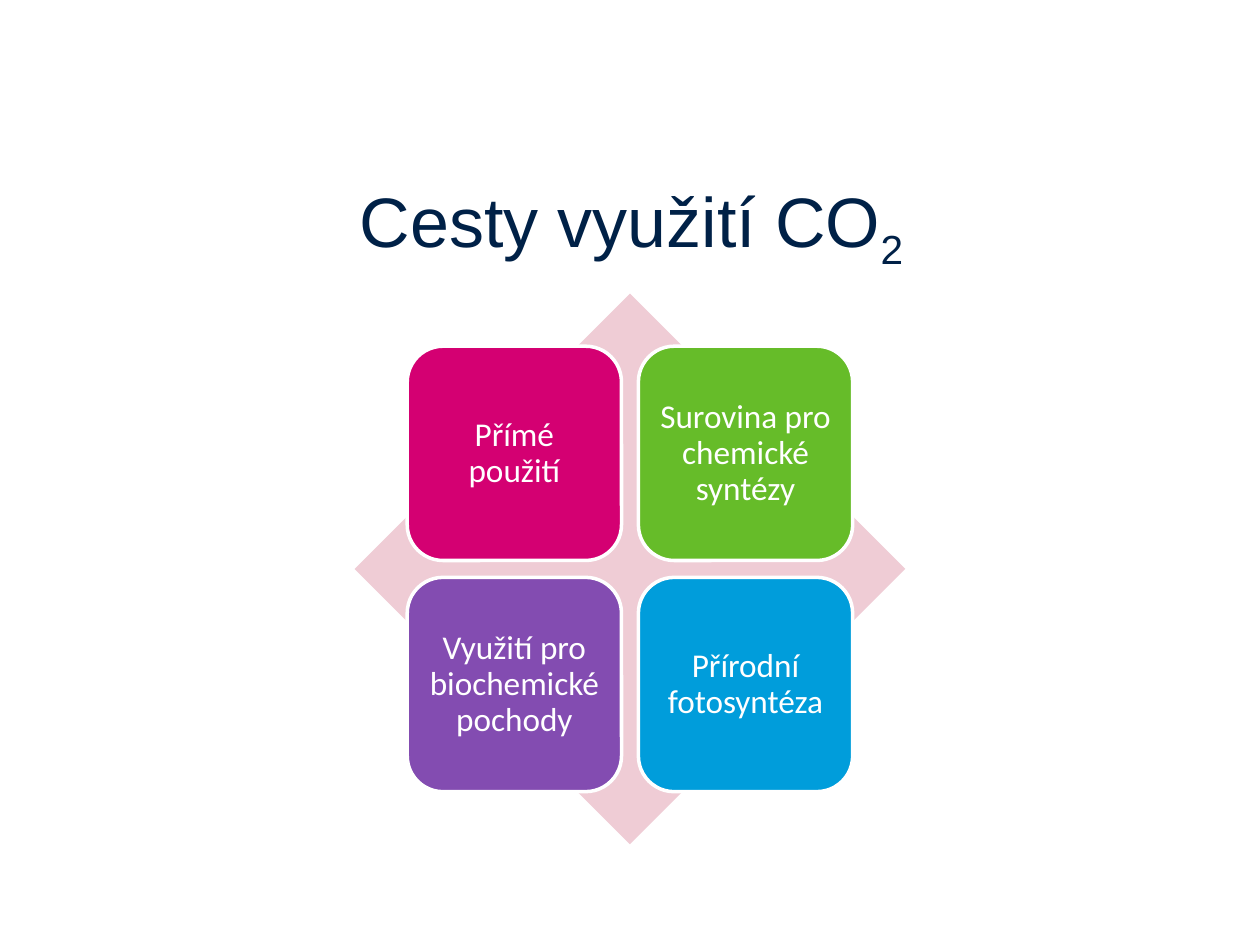
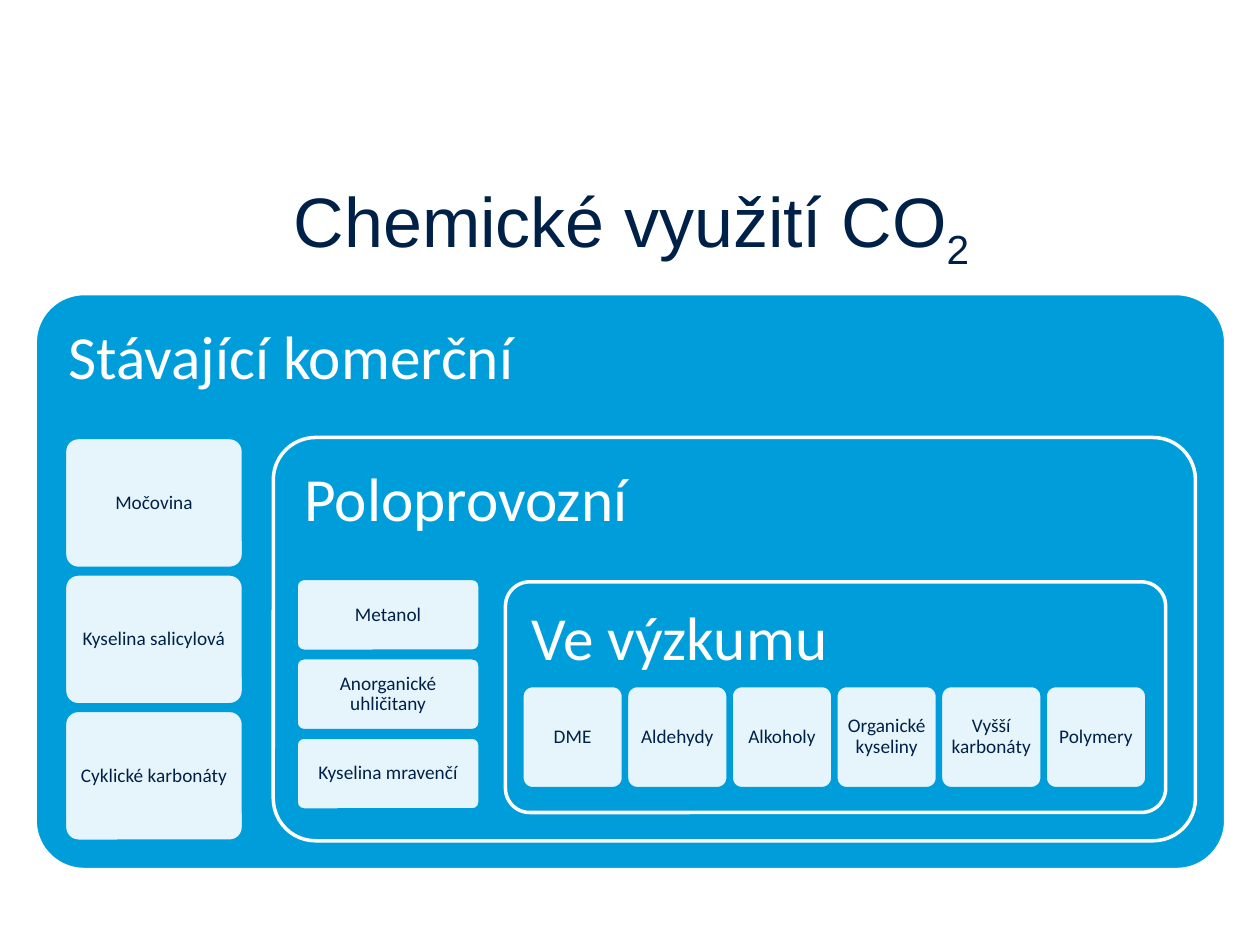
from lxml import etree
from pptx import Presentation
from pptx import util as u
from pptx.dml.color import RGBColor
from pptx.enum import shapes, text
from pptx.oxml.ns import qn

NAVY = RGBColor(0x00, 0x21, 0x47)
WHITE = RGBColor(0xFF, 0xFF, 0xFF)
PINK = RGBColor(0xEF, 0xCC, 0xD5)
MAGENTA = RGBColor(0xD4, 0x00, 0x72)
GREEN = RGBColor(0x66, 0xBC, 0x29)
PURPLE = RGBColor(0x83, 0x4C, 0xB1)
BLUE = RGBColor(0x00, 0x9D, 0xDB)


def add_titled_slide(title):
    """Add a blank slide with a centred title that ends in a subscript 2."""
    s = prs.slides.add_slide(prs.slide_layouts[6])
    tf = s.shapes.add_textbox(u.Cm(1.3), u.Cm(3.53), u.Cm(22.86), u.Cm(2.01)).text_frame
    tf.word_wrap = True
    tf.vertical_anchor = text.MSO_ANCHOR.MIDDLE
    p = tf.paragraphs[0]
    p.alignment = text.PP_ALIGN.CENTER
    for part in (title, "2"):
        r = p.add_run()
        r.text = part
        r.font.name, r.font.size = "Arial", u.Pt(40)
        r.font.color.rgb = NAVY
    r._r.get_or_add_rPr().set("baseline", "-25000")
    return s


def add_box(s, label, box, fill, line, color, size, inset, adj=0.105, heading=False):
    """Add a labelled rounded box; a heading sits at its top left."""
    sp = s.shapes.add_shape(shapes.MSO_SHAPE.ROUNDED_RECTANGLE, *map(u.Cm, box))
    sp.shadow.inherit = False
    sp.adjustments[0] = adj
    sp.fill.solid()
    sp.fill.fore_color.rgb = fill
    sp.line.color.rgb = line
    sp.line.width = u.Pt(2)
    tf = sp.text_frame
    tf.word_wrap = True
    tf.margin_left = tf.margin_right = tf.margin_top = tf.margin_bottom = u.Cm(inset)
    tf.vertical_anchor = text.MSO_ANCHOR.TOP if heading else text.MSO_ANCHOR.MIDDLE
    p = tf.paragraphs[0]
    p.alignment = text.PP_ALIGN.LEFT if heading else text.PP_ALIGN.CENTER
    p.line_spacing = 0.9
    r = p.add_run()
    r.text = label
    r.font.name, r.font.size = "Calibri", u.Pt(size)
    r.font.color.rgb = color
    return sp


prs = Presentation()
prs.slide_width, prs.slide_height = u.Cm(25.4), u.Cm(19.05)

# Slide 1: four tiles over a diamond
s = add_titled_slide("Cesty využití CO")
sp = s.shapes.add_shape(shapes.MSO_SHAPE.DIAMOND, u.Cm(7.15), u.Cm(5.92), u.Cm(11.1), u.Cm(11.1))
sp.shadow.inherit = False
sp.fill.solid()
sp.fill.fore_color.rgb = PINK
sp.line.fill.background()

tiles = [
    ("Přímé použití", MAGENTA),
    ("Surovina pro chemické syntézy", GREEN),
    ("Využití pro biochemické pochody", PURPLE),
    ("Přírodní fotosyntéza", BLUE),
]
TILE, TILE_STEP = 4.32, 4.66
for i, (label, fill) in enumerate(tiles):
    row, col = divmod(i, 2)
    box = (8.21 + col * TILE_STEP, 6.98 + row * TILE_STEP, TILE, TILE)
    add_box(s, label, box, fill, WHITE, WHITE, 19, 0.2, adj=0.167)

# Slide 2: nested panels, each with its own cards
s = add_titled_slide("Chemické využití CO")
# heading, panel box, corner, first card box, card step (x, y), card labels
panels = [
    ("Stávající komerční", (0.71, 5.92, 24, 11.61), 0.085,
     (1.3, 8.82, 3.61, 2.64), (0, 2.75),
     ["Močovina", "Kyselina salicylová", "Cyklické karbonáty"]),
    ("Poloprovozní", (5.51, 8.82, 18.59, 8.13), 0.105,
     (5.97, 11.66, 3.71, 1.47), (0, 1.6),
     ["Metanol", "Anorganické uhličitany", "Kyselina mravenčí"]),
    ("Ve výzkumu", (10.19, 11.73, 13.31, 4.65), 0.105,
     (10.52, 13.82, 2.05, 2.08), (2.11, 0),
     ["DME", "Aldehydy", "Alkoholy", "Organické kyseliny", "Vyšší karbonáty", "Polymery"]),
]
for heading, panel, corner, (x, y, w, h), (dx, dy), cards in panels:
    add_box(s, heading, panel, BLUE, WHITE, WHITE, 35, 0.38, adj=corner, heading=True)
    for i, label in enumerate(cards):
        box = (x + i * dx, y + i * dy, w, h)
        sp = add_box(s, label, box, WHITE, BLUE, NAVY, 11, 0.12)
        clr = sp._element.spPr.find(qn("a:solidFill")).find(qn("a:srgbClr"))
        etree.SubElement(clr, qn("a:alpha")).set("val", "90000")

prs.save("out.pptx")
